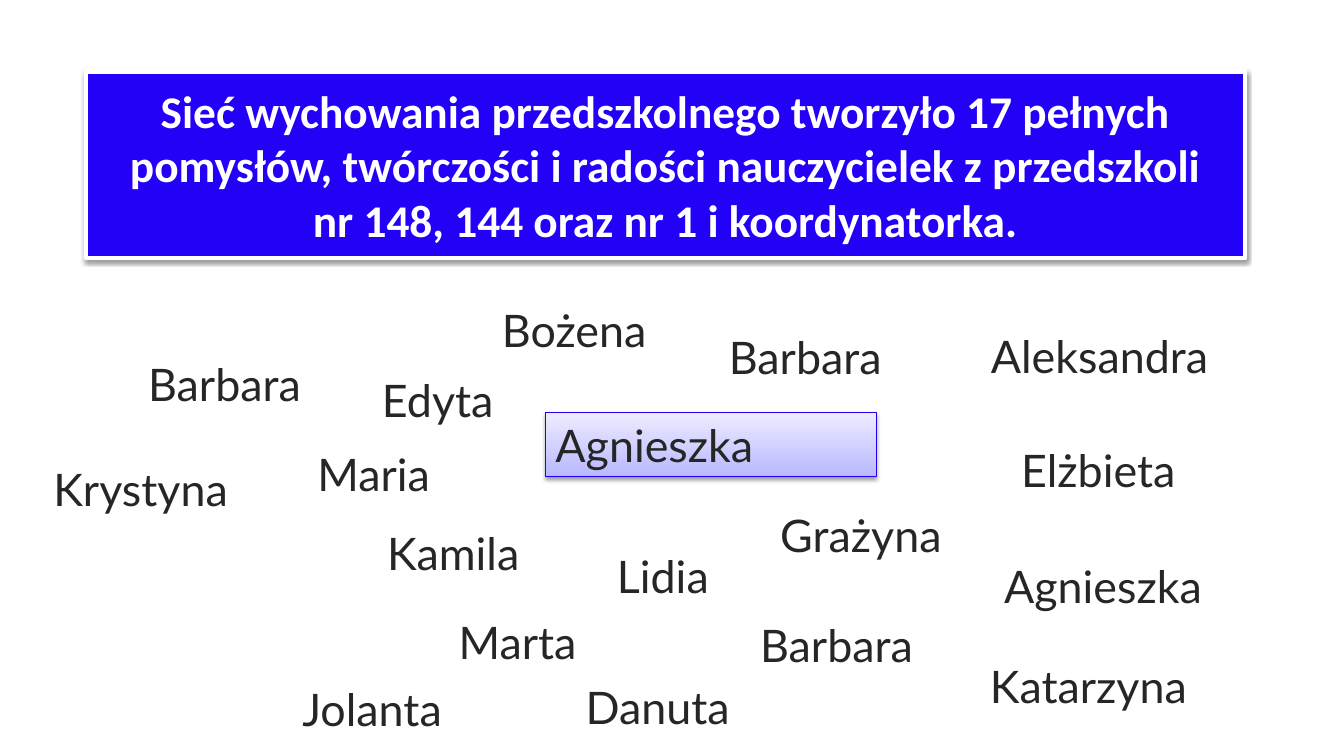
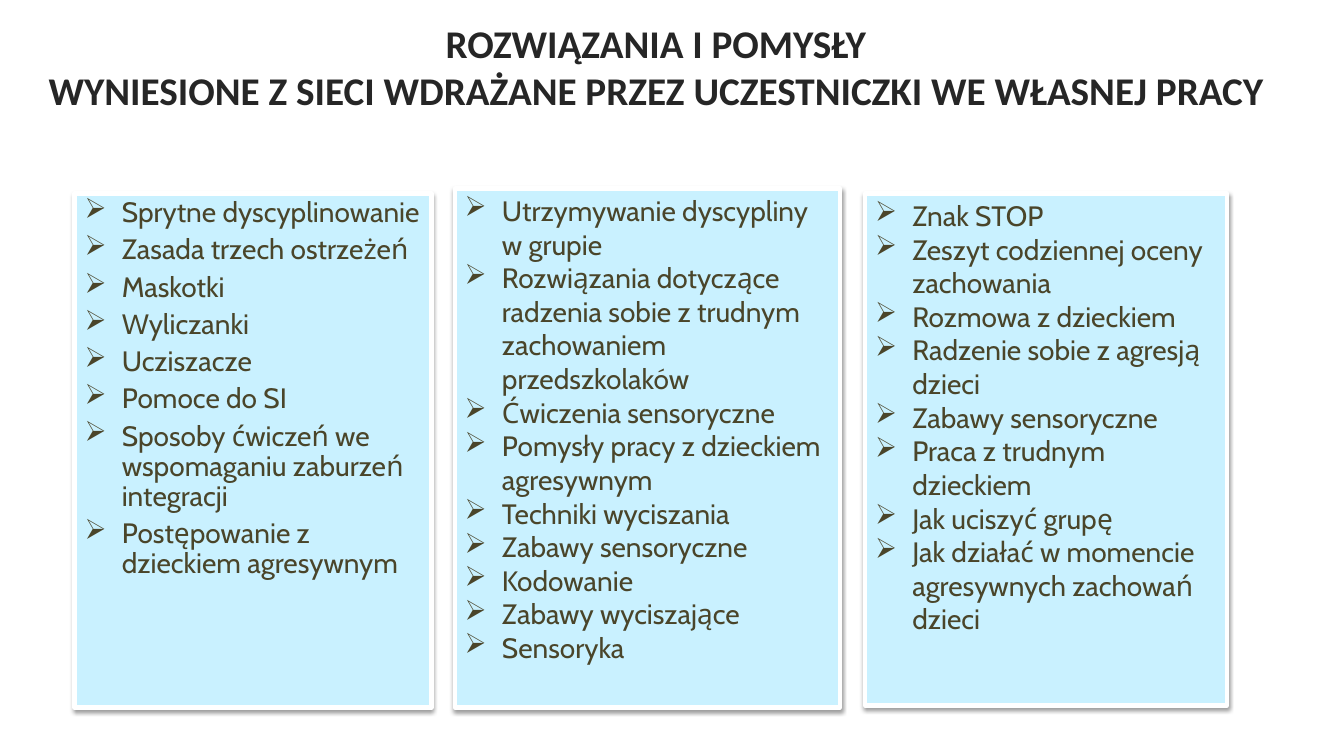
from lxml import etree
from pptx import Presentation
from pptx.dml.color import RGBColor
from pptx.enum import shapes, text
from pptx.oxml import ns
from pptx.util import Inches, Pt

WHITE = RGBColor(0xFF, 0xFF, 0xFF)
INK = RGBColor(0x26, 0x26, 0x26)
OLIVE = RGBColor(0x4A, 0x45, 0x2A)
SKY = RGBColor(0xC9, 0xF1, 0xFF)
BLUE = RGBColor(0x23, 0x00, 0xF6)
EDGE_BLUE = RGBColor(0x22, 0x00, 0xF1)
LILAC = RGBColor(0xB9, 0xB8, 0xFF)
PALE_LILAC = RGBColor(0xED, 0xEC, 0xFF)

TITLE_FONT, NAME_FONT, LIST_FONT = "Calibri", "Lato", "Cabin"
NAME_HEIGHT = 0.64
LIST_INDENT = Inches(0.37)

# Name, left, top, width
NAMES = [
    ("Aleksandra", 9.73, 3.21, 3.6),
    ("Agnieszka", 9.86, 5.49, 3.09),
    ("Bożena", 4.88, 2.95, 2.39),
    ("Grażyna", 7.64, 4.99, 2.39),
    ("Barbara", 1.37, 3.49, 2.39),
    ("Maria", 3.05, 4.38, 2.39),
    ("Krystyna", 0.43, 4.53, 2.92),
    ("Lidia", 6.02, 5.39, 2.39),
    ("Jolanta", 2.9, 6.71, 2.39),
    ("Elżbieta", 10.03, 4.34, 2.39),
    ("Katarzyna", 9.72, 6.49, 3.09),
    ("Barbara", 7.13, 3.22, 2.39),
    ("Marta", 4.45, 6.05, 2.39),
    ("Edyta", 3.69, 3.65, 2.39),
    ("Danuta", 5.71, 6.69, 2.39),
    ("Barbara", 7.44, 6.08, 2.39),
    ("Kamila", 3.74, 5.17, 2.39),
]

DISCIPLINE_IDEAS = [
    "Sprytne dyscyplinowanie",
    "Zasada trzech ostrzeżeń",
    "Maskotki",
    "Wyliczanki",
    "Ucziszacze",
    "Pomoce do SI",
    "Sposoby ćwiczeń we wspomaganiu zaburzeń integracji",
    "Postępowanie z dzieckiem agresywnym",
]
GROUP_IDEAS = [
    "Utrzymywanie dyscypliny w grupie",
    "Rozwiązania dotyczące radzenia sobie z trudnym zachowaniem przedszkolaków",
    "Ćwiczenia sensoryczne",
    "Pomysły pracy z dzieckiem agresywnym",
    "Techniki wyciszania",
    "Zabawy sensoryczne",
    "Kodowanie",
    "Zabawy wyciszające",
    "Sensoryka",
]
BEHAVIOUR_IDEAS = [
    "Znak STOP",
    "Zeszyt codziennej oceny zachowania",
    "Rozmowa z dzieckiem",
    "Radzenie sobie z agresją dzieci",
    "Zabawy sensoryczne",
    "Praca z trudnym dzieckiem",
    "Jak uciszyć grupę",
    "Jak działać w momencie agresywnych zachowań dzieci",
]


def add_shadow(shape):
    """Give the shape a soft shadow straight below it."""
    shape.shadow.inherit = False
    effects = shape._element.spPr.find(ns.qn("a:effectLst"))
    shadow = etree.SubElement(effects, ns.qn("a:outerShdw"), blurRad=str(Pt(3.1)),
                              dist=str(Pt(1.6)), dir="5400000", rotWithShape="0")
    color = etree.SubElement(shadow, ns.qn("a:srgbClr"), val="000000")
    etree.SubElement(color, ns.qn("a:alpha"), val="38000")


def add_panel(slide, area, fill=None, line=WHITE, line_width=3):
    """Add a shadowed rectangle; without a fill colour it gets the lilac gradient."""
    panel = slide.shapes.add_shape(shapes.MSO_SHAPE.RECTANGLE, *map(Inches, area))
    if fill is None:
        panel.fill.gradient()
        panel.fill.gradient_angle = 90
        for stop, color in zip(panel.fill.gradient_stops, (LILAC, PALE_LILAC)):
            stop.color.rgb = color
    else:
        panel.fill.solid()
        panel.fill.fore_color.rgb = fill
    panel.line.color.rgb = line
    panel.line.width = Pt(line_width)
    add_shadow(panel)
    return panel


def add_text_box(slide, area):
    return slide.shapes.add_textbox(*map(Inches, area))


def format_paragraph(para, font, size, color, align=text.PP_ALIGN.LEFT, bold=False):
    para.alignment = align
    for span in para.runs:
        span.font.name = font
        span.font.size = Pt(size)
        span.font.color.rgb = color
        span.font.bold = bold


def write_title(box, words, size, color):
    frame = box.text_frame
    frame.word_wrap = True
    frame.vertical_anchor = text.MSO_ANCHOR.MIDDLE
    frame.text = words
    format_paragraph(frame.paragraphs[0], TITLE_FONT, size, color,
                     text.PP_ALIGN.CENTER, bold=True)


def write_name(box, name):
    frame = box.text_frame
    frame.word_wrap = True
    frame.vertical_anchor = text.MSO_ANCHOR.TOP
    frame.text = name
    format_paragraph(frame.paragraphs[0], NAME_FONT, 32, INK)


def add_arrow_bullet(para):
    properties = para._p.get_or_add_pPr()
    properties.set("marL", str(LIST_INDENT))
    properties.set("indent", str(-LIST_INDENT))
    etree.SubElement(properties, ns.qn("a:buChar"), char="➢")


def add_idea_card(slide, area, ideas, line_spacing=1.0, gap=0):
    frame = add_panel(slide, area, SKY).text_frame
    frame.word_wrap = True
    frame.vertical_anchor = text.MSO_ANCHOR.TOP
    frame.text = "\n".join(ideas)
    for index, para in enumerate(frame.paragraphs):
        add_arrow_bullet(para)
        para.line_spacing = line_spacing
        para.space_before = Pt(gap if index else 0)
        format_paragraph(para, LIST_FONT, 20, OLIVE)


def build_names_slide(slide):
    banner = add_panel(slide, (0.85, 0.71, 11.5, 1.85), BLUE)
    write_title(banner, "Sieć wychowania przedszkolnego tworzyło 17 pełnych pomysłów, "
                "twórczości i radości nauczycielek z przedszkoli\v"
                "nr 148, 144 oraz nr 1 i koordynatorka.", 32.4, WHITE)
    for name, left, top, width in NAMES:
        write_name(add_text_box(slide, (left, top, width, NAME_HEIGHT)), name)
    coordinator = add_panel(slide, (5.41, 4.09, 3.28, NAME_HEIGHT),
                            line=EDGE_BLUE, line_width=0.75)
    write_name(coordinator, "Agnieszka")


def build_ideas_slide(slide):
    heading = add_text_box(slide, (0.16, 0.27, 12.69, 0.78))
    write_title(heading, "ROZWIĄZANIA I POMYSŁY\vWYNIESIONE Z SIECI WDRAŻANE PRZEZ "
                "UCZESTNICZKI WE WŁASNEJ PRACY", 28, INK)
    add_idea_card(slide, (0.74, 1.92, 3.54, 5.1), DISCIPLINE_IDEAS, 0.9, 5)
    add_idea_card(slide, (4.51, 1.87, 3.82, 5.15), GROUP_IDEAS)
    add_idea_card(slide, (8.58, 1.92, 3.59, 5.08), BEHAVIOUR_IDEAS)


def main():
    deck = Presentation()
    deck.slide_width, deck.slide_height = Inches(13.33), Inches(7.5)
    blank = deck.slide_layouts[6]
    for build in (build_names_slide, build_ideas_slide):
        build(deck.slides.add_slide(blank))
    deck.save("out.pptx")


if __name__ == "__main__":
    main()
